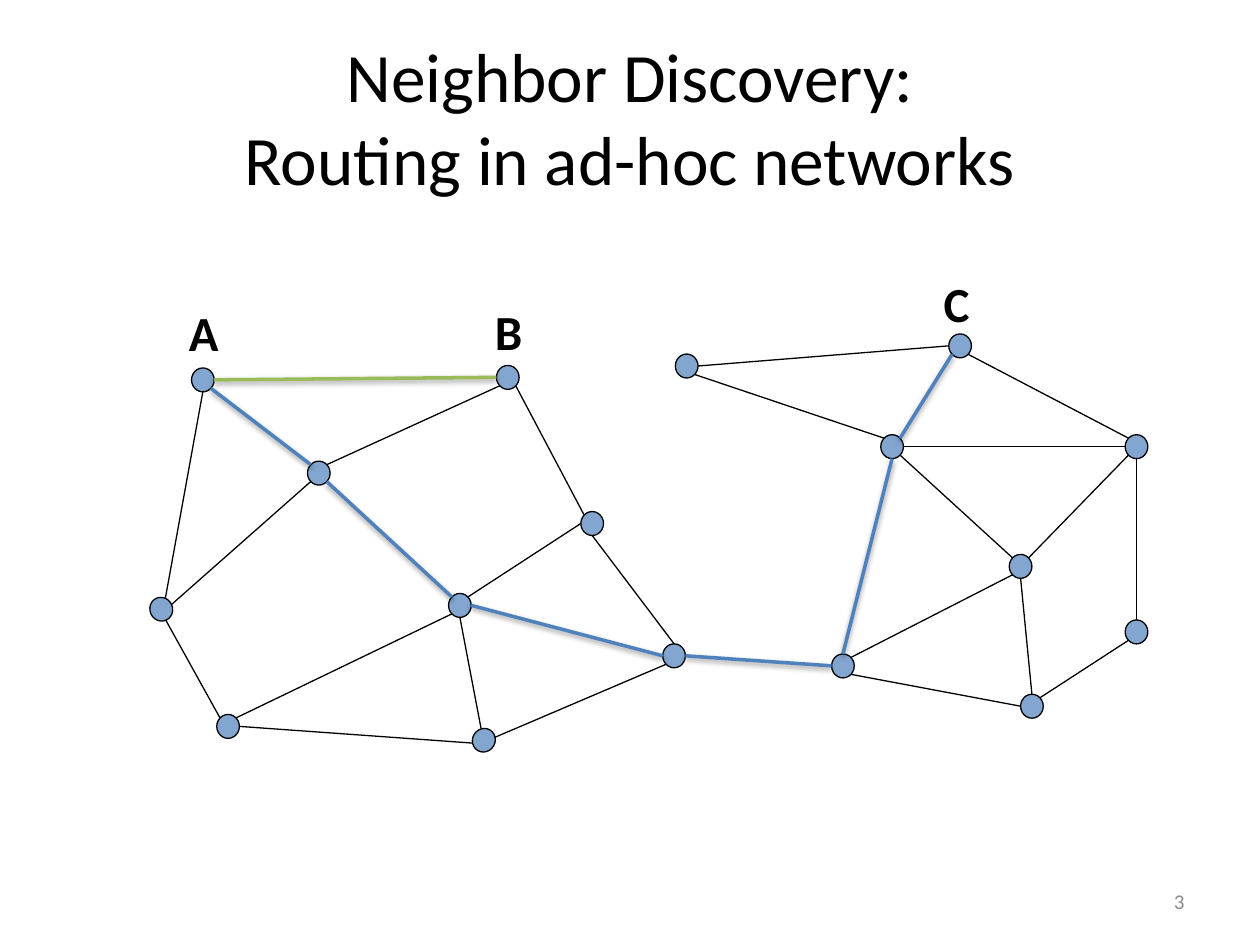
"""Build a slide showing a multi-hop route through an ad-hoc network."""
import math

import pptx
import pptx.dml.color
import pptx.enum.shapes
import pptx.enum.text
import pptx.oxml
import pptx.oxml.ns
import pptx.util

Inches = pptx.util.Inches
Pt = pptx.util.Pt
ALIGN = pptx.enum.text.PP_ALIGN
ANCHOR = pptx.enum.text.MSO_ANCHOR

FONT = "Calibri"
BLACK, BLUE, GREEN, GRAY = "000000", "4F81BD", "9BBB59", "8C8C8C"
NODE_WIDTH, NODE_HEIGHT = 0.18, 0.19

TITLE = "Neighbor Discovery:\vRouting in ad-hoc networks"
LABELS = [("C", 7.39, 2.12, 0.41), ("A", 1.4, 2.35, 0.46), ("B", 3.83, 2.34, 0.42)]

NODES = {
    "A": (1.52, 2.92), "B": (3.94, 2.9), "C": (7.53, 2.65), "D": (2.44, 3.66),
    "E": (3.56, 4.71), "F": (4.61, 4.06), "G": (1.19, 4.74), "H": (1.72, 5.67),
    "I": (3.75, 5.78), "J": (5.26, 5.11), "K": (5.36, 2.81), "L": (6.99, 3.45),
    "M": (8.01, 4.4), "N": (8.93, 3.45), "O": (8.93, 4.92), "P": (8.1, 5.51),
    "Q": (6.6, 5.19),
}
ROTATIONS = {"G": 336.5, "I": 31}
SITES = ["E", "SE", "S", "SW", "W", "NW", "N", "NE"]

LINKS = [
    "G E D SW", "A S G NE", "G S H NW", "H NE E SW", "H E I SW", "E S I NW",
    "I NE J SW", "F S J N", "K SE L NW", "L SE M NW", "Q NE M SW", "B SW D NE",
    "K E C W", "B SE F NW", "C SE N NW", "M NE N SW", "L E N W", "E NE F W",
    "M S P N", "N S O N", "P NE O SW", "Q SE P W",
]
DIRECT_LINK = "A E B W"
ROUTE = ["A SE D NW", "D SE E NW", "E E J W", "J E Q W", "Q N L S", "C SW L NE"]


def color(value):
    return pptx.dml.color.RGBColor.from_string(value)


def add_text(slide, text, left, top, width, height, *, size, fill=BLACK, bold=False,
             align=ALIGN.LEFT, anchor=ANCHOR.TOP, wrap=True):
    box = slide.shapes.add_textbox(Inches(left), Inches(top), Inches(width), Inches(height))
    frame = box.text_frame
    frame.word_wrap = wrap
    frame.vertical_anchor = anchor
    paragraph = frame.paragraphs[0]
    paragraph.text = text
    paragraph.alignment = align
    for run in paragraph.runs:
        run.font.name = FONT
        run.font.size = Pt(size)
        run.font.bold = bold
        run.font.color.rgb = color(fill)


def add_node(slide, name):
    left, top = NODES[name]
    node = slide.shapes.add_shape(
        pptx.enum.shapes.MSO_SHAPE.OVAL,
        Inches(left), Inches(top), Inches(NODE_WIDTH), Inches(NODE_HEIGHT))
    node.rotation = ROTATIONS.get(name, 0)
    node.shadow.inherit = False
    node.fill.solid()
    node.fill.fore_color.rgb = color(BLUE)
    fill = node.fill._xPr.find(pptx.oxml.ns.qn("a:solidFill"))
    fill[0].append(pptx.oxml.parse_xml(
        f'<a:alpha {pptx.oxml.ns.nsdecls("a")} val="70000"/>'))
    node.line.color.rgb = color(BLACK)
    node.line.width = Pt(0.75)


def site_position(name, site):
    left, top = NODES[name]
    angle = math.radians(SITES.index(site) * 45 + ROTATIONS.get(name, 0))
    return (Inches(left + NODE_WIDTH / 2 * (1 + math.cos(angle))),
            Inches(top + NODE_HEIGHT / 2 * (1 + math.sin(angle))))


def add_link(shapes, link, *, fill=BLACK, width=0.75, shadow=False):
    start, start_site, end, end_site = link.split()
    connector = shapes.add_connector(
        pptx.enum.shapes.MSO_CONNECTOR.STRAIGHT,
        *site_position(start, start_site), *site_position(end, end_site))
    connector.line.color.rgb = color(fill)
    connector.line.width = Pt(width)
    effect = (
        '<a:outerShdw blurRad="40000" dist="20000" dir="5400000" rotWithShape="0">'
        f'<a:srgbClr val="{BLACK}"><a:alpha val="38000"/></a:srgbClr></a:outerShdw>'
    ) if shadow else ""
    connector._element.spPr.append(pptx.oxml.parse_xml(
        f'<a:effectLst {pptx.oxml.ns.nsdecls("a")}>{effect}</a:effectLst>'))


def main():
    presentation = pptx.Presentation()
    presentation.slide_width, presentation.slide_height = Inches(10), Inches(7.5)
    slide = presentation.slides.add_slide(presentation.slide_layouts[6])

    add_text(slide, TITLE, 0.5, 0.3, 9, 1.25, size=39.6,
             align=ALIGN.CENTER, anchor=ANCHOR.MIDDLE)
    for name in NODES:
        add_node(slide, name)
    for link in LINKS + [DIRECT_LINK] + ROUTE:
        add_link(slide.shapes, link)
    for text, left, top, width in LABELS:
        add_text(slide, text, left, top, width, 0.57, size=28, bold=True, wrap=False)
    add_text(slide, "3", 7.17, 6.95, 2.33, 0.4, size=12, fill=GRAY,
             align=ALIGN.RIGHT, anchor=ANCHOR.MIDDLE)

    add_link(slide.shapes, DIRECT_LINK, fill=GREEN, width=2, shadow=True)
    route_group = slide.shapes.add_group_shape()
    for link in ROUTE:
        add_link(route_group.shapes, link, fill=BLUE, width=2, shadow=True)

    presentation.save("out.pptx")


if __name__ == "__main__":
    main()
